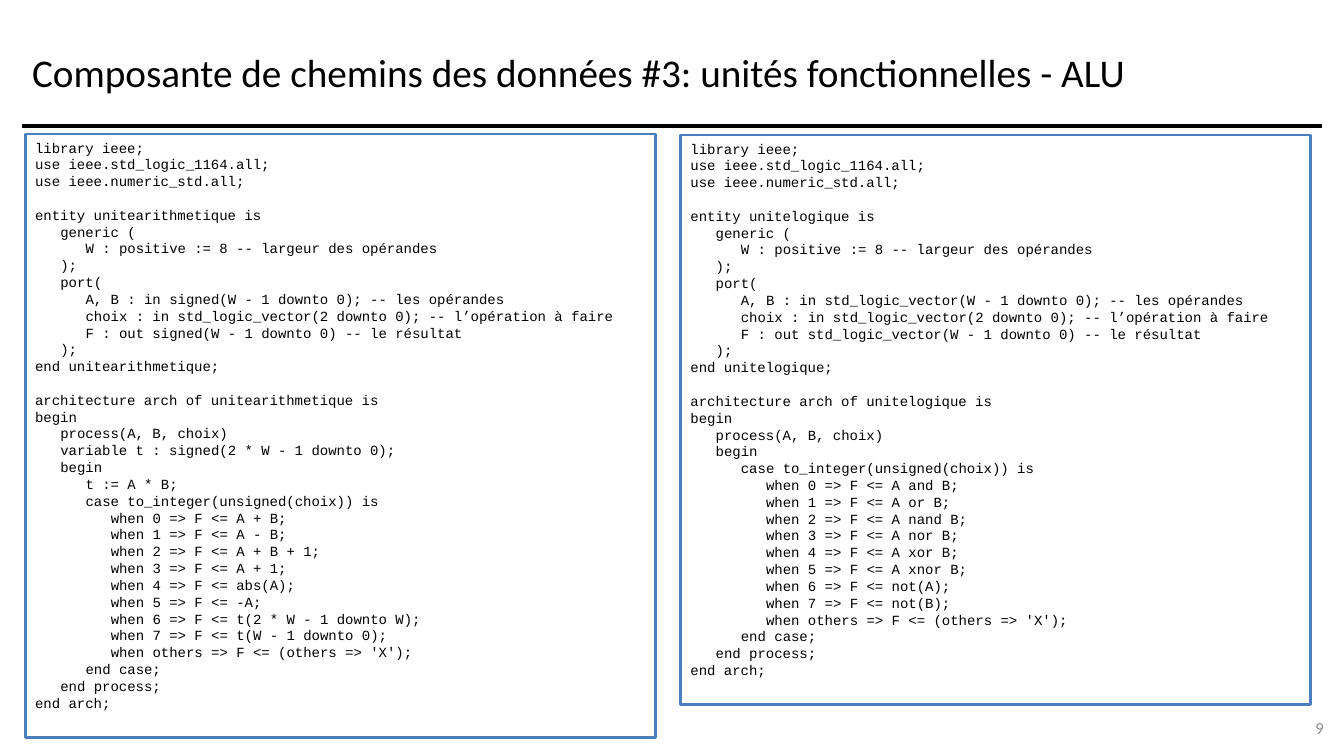
from dataclasses import dataclass

from lxml import etree
from pptx import Presentation
from pptx import util as u
from pptx.dml.color import RGBColor
from pptx.enum import shapes, text
from pptx.oxml import ns
from pptx.slide import Slide

BLACK = RGBColor(0x00, 0x00, 0x00)
WHITE = RGBColor(0xFF, 0xFF, 0xFF)
GREY = RGBColor(0x8C, 0x8C, 0x8C)
BLUE = RGBColor(0x4B, 0x7E, 0xBC)
TAB_STOPS = (0.25, 0.5, 0.75, 1.0, 1.25)
LINE_PITCH = u.Pt(12)

VHDL = """library ieee;
use ieee.std_logic_1164.all;
use ieee.numeric_std.all;

entity {name} is
   generic (
      W : positive := 8 -- largeur des opérandes
   );
   port(
      A, B : in {type}(W - 1 downto 0); -- les opérandes
      choix : in std_logic_vector(2 downto 0); -- l’opération à faire
      F : out {type}(W - 1 downto 0) -- le résultat
   );
end {name};

architecture arch of {name} is
begin
   process(A, B, choix)
{start}
      case to_integer(unsigned(choix)) is
{choices}
         when others => F <= (others => 'X');
      end case;
   end process;
end arch;"""

ARITHMETIC_START = """   variable t : signed(2 * W - 1 downto 0);
   begin
      t := A * B;"""


@dataclass(frozen=True)
class Label:
    content: str
    left: float
    top: float
    width: float
    height: float
    size: int
    color: RGBColor
    alignment: text.PP_ALIGN


@dataclass(frozen=True)
class Unit:
    name: str
    signal_type: str
    start: str
    operations: tuple[str, ...]
    left: float
    top: float
    height: float

    def code(self) -> str:
        choices = "\n".join(
            f"         when {index} => F <= {operation};"
            for index, operation in enumerate(self.operations)
        )
        source = VHDL.format(
            name=self.name, type=self.signal_type, start=self.start, choices=choices
        )
        return source.replace("   ", "\t")


LABELS = (
    Label("Composante de chemins des données #3: unités fonctionnelles - ALU",
          0.22, 0.17, 12.89, 1.08, 28, BLACK, text.PP_ALIGN.LEFT),
    Label("9", 12.56, 7.02, 0.67, 0.4, 12, GREY, text.PP_ALIGN.RIGHT),
)

UNITS = (
    Unit("unitearithmetique", "signed", ARITHMETIC_START,
         ("A + B", "A - B", "A + B + 1", "A + 1", "abs(A)", "-A",
          "t(2 * W - 1 downto W)", "t(W - 1 downto 0)"),
         0.25, 1.33, 5.99),
    Unit("unitelogique", "std_logic_vector", "   begin",
         ("A and B", "A or B", "A nand B", "A nor B", "A xor B", "A xnor B",
          "not(A)", "not(B)"),
         6.75, 1.34, 5.65),
)


def add_label(slide: Slide, label: Label) -> None:
    shape = slide.shapes.add_textbox(
        u.Inches(label.left), u.Inches(label.top),
        u.Inches(label.width), u.Inches(label.height),
    )
    frame = shape.text_frame
    frame.word_wrap = True
    frame.vertical_anchor = text.MSO_ANCHOR.MIDDLE
    paragraph = frame.paragraphs[0]
    paragraph.text = label.content
    paragraph.alignment = label.alignment
    paragraph.font.name = "Calibri"
    paragraph.font.size = u.Pt(label.size)
    paragraph.font.color.rgb = label.color


def add_rule(slide: Slide) -> None:
    rule = slide.shapes.add_connector(
        shapes.MSO_CONNECTOR.STRAIGHT,
        u.Inches(0.22), u.Inches(1.25), u.Inches(13.11), u.Inches(1.25),
    )
    rule.line.color.rgb = BLACK
    rule.line.width = u.Pt(3)
    etree.SubElement(rule._element.spPr, ns.qn("a:effectLst"))


def add_code_box(slide: Slide, unit: Unit) -> None:
    shape = slide.shapes.add_shape(
        shapes.MSO_SHAPE.RECTANGLE, u.Inches(unit.left), u.Inches(unit.top),
        u.Inches(6.25), u.Inches(unit.height),
    )
    shape.shadow.inherit = False
    shape.fill.solid()
    shape.fill.fore_color.rgb = WHITE
    shape.line.color.rgb = BLUE
    shape.line.width = u.Pt(2)
    frame = shape.text_frame
    frame.word_wrap = True
    frame.vertical_anchor = text.MSO_ANCHOR.TOP
    sections = unit.code().split("\n\n")
    frame.text = "\n".join(sections)
    section_starts = {section.split("\n")[0] for section in sections[1:]}
    for paragraph in frame.paragraphs:
        paragraph.alignment = text.PP_ALIGN.LEFT
        if paragraph.text in section_starts:
            paragraph.space_before = LINE_PITCH
        properties = paragraph._p.get_or_add_pPr()
        tabs = etree.SubElement(properties, ns.qn("a:tabLst"))
        for stop in TAB_STOPS:
            etree.SubElement(tabs, ns.qn("a:tab"), pos=str(u.Inches(stop)), algn="l")
        paragraph.font.name = "Courier New"
        paragraph.font.size = u.Pt(10)
        paragraph.font.color.rgb = BLACK


def main() -> None:
    presentation = Presentation()
    presentation.slide_width = u.Inches(13.33)
    presentation.slide_height = u.Inches(7.5)
    slide = presentation.slides.add_slide(presentation.slide_layouts[6])
    add_rule(slide)
    for label in LABELS:
        add_label(slide, label)
    for unit in UNITS:
        add_code_box(slide, unit)
    presentation.save("out.pptx")


if __name__ == "__main__":
    main()
